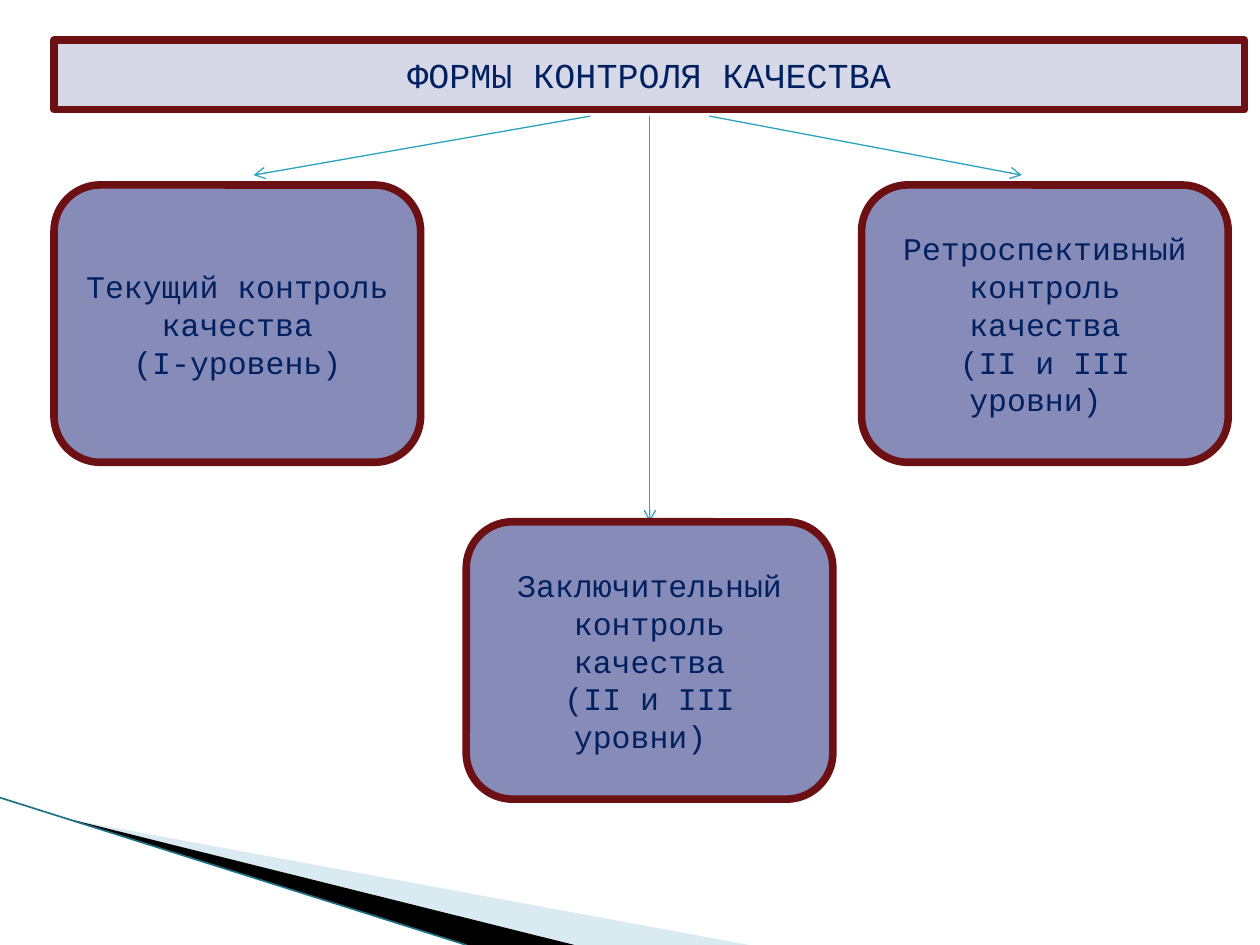
from dataclasses import dataclass

from lxml.etree import SubElement
from pptx import Presentation
from pptx.dml.color import RGBColor
from pptx.enum.shapes import MSO_CONNECTOR, MSO_SHAPE
from pptx.enum.text import MSO_ANCHOR, MSO_AUTO_SIZE, PP_ALIGN
from pptx.oxml.ns import qn
from pptx.slide import Slide
from pptx.util import Cm, Pt


def color(value):
    return RGBColor.from_string(value)


def write(frame, text, *, size, font, ink):
    frame.word_wrap = True
    frame.auto_size = MSO_AUTO_SIZE.NONE
    frame.vertical_anchor = MSO_ANCHOR.MIDDLE
    frame.text = text
    for paragraph in frame.paragraphs:
        paragraph.alignment = PP_ALIGN.CENTER
        paragraph.font.size = Pt(size)
        paragraph.font.name = font
        paragraph.font.color.rgb = color(ink)


@dataclass
class Diagram:
    """Draws the quality control diagram on one slide in one style."""

    slide: Slide
    font: str = "Courier New"
    ink: str = "002060"
    border: str = "6D1014"
    arrow_color: str = "2DA2BF"

    def panel(self, shape, text, fill, size):
        shape.fill.solid()
        shape.fill.fore_color.rgb = color(fill)
        shape.line.color.rgb = color(self.border)
        shape.line.width = Pt(4.33)
        shape.shadow.inherit = False
        write(shape.text_frame, text, size=size, font=self.font, ink=self.ink)

    def heading(self, text, left, top, width, height):
        title = self.slide.shapes.title
        title.left, title.top = Cm(left), Cm(top)
        title.width, title.height = Cm(width), Cm(height)
        outline = SubElement(title.element.spPr, qn("a:prstGeom"), prst="roundRect")
        SubElement(outline, qn("a:avLst"))
        self.panel(title, text, "D7D8E7", 20)

    def box(self, text, left, top, width=7.39, height=5.59):
        shape = self.slide.shapes.add_shape(
            MSO_SHAPE.ROUNDED_RECTANGLE, Cm(left), Cm(top), Cm(width), Cm(height))
        self.panel(shape, text, "878BB8", 18)

    def line(self, start, end, stroke, width):
        connector = self.slide.shapes.add_connector(
            MSO_CONNECTOR.STRAIGHT, *map(Cm, start), *map(Cm, end))
        connector.line.color.rgb = color(stroke)
        connector.line.width = Pt(width)
        SubElement(connector.element.spPr, qn("a:effectLst"))
        return connector

    def arrow(self, start, end):
        connector = self.line(start, end, self.arrow_color, 0.75)
        SubElement(connector.line._get_or_add_ln(), qn("a:tailEnd"), type="arrow")

    def wedge(self, corners, fill, opacity=100):
        points = [(Cm(x), Cm(y)) for x, y in corners]
        builder = self.slide.shapes.build_freeform(*points[0])
        builder.add_line_segments(points[1:], close=True)
        shape = builder.convert_to_shape()
        shape.fill.solid()
        shape.fill.fore_color.rgb = color(fill)
        shape.line.fill.background()
        shape.shadow.inherit = False
        tint = shape.element.spPr.find(qn("a:solidFill"))[0]
        SubElement(tint, qn("a:alpha"), val=str(opacity * 1000))


def main():
    deck = Presentation()
    deck.slide_width, deck.slide_height = Cm(25.4), Cm(19.05)
    diagram = Diagram(deck.slides.add_slide(deck.slide_layouts[5]))

    diagram.wedge([(1.4, 16.52), (15.1, 19.05), (11.58, 19.05)], "A0CBDC", 40)
    diagram.wedge([(1.35, 16.5), (11.58, 19.05), (9.42, 19.05)], "000000")
    diagram.line((0, 16.08), (9.4, 19.05), "1F7285", 0.95)

    diagram.heading("ФОРМЫ КОНТРОЛЯ КАЧЕСТВА", 1.09, 0.81, 24, 1.4)
    center, arrow_top = 13.1, 2.34
    for offset, tip in ((0, (center, 10.52)), (1.2, (20.6, 3.53)), (-1.2, (5.11, 3.53))):
        diagram.arrow((center + offset, arrow_top), tip)

    later_levels = "(II и III уровни) "
    for name, level, left, top in (
        ("Текущий", "(I-уровень)", 1.09, 3.73),
        ("Заключительный", later_levels, 9.4, 10.52),
        ("Ретроспективный", later_levels, 17.37, 3.73),
    ):
        diagram.box(f"{name} контроль качества\n{level}", left, top)

    deck.save("out.pptx")


if __name__ == "__main__":
    main()
